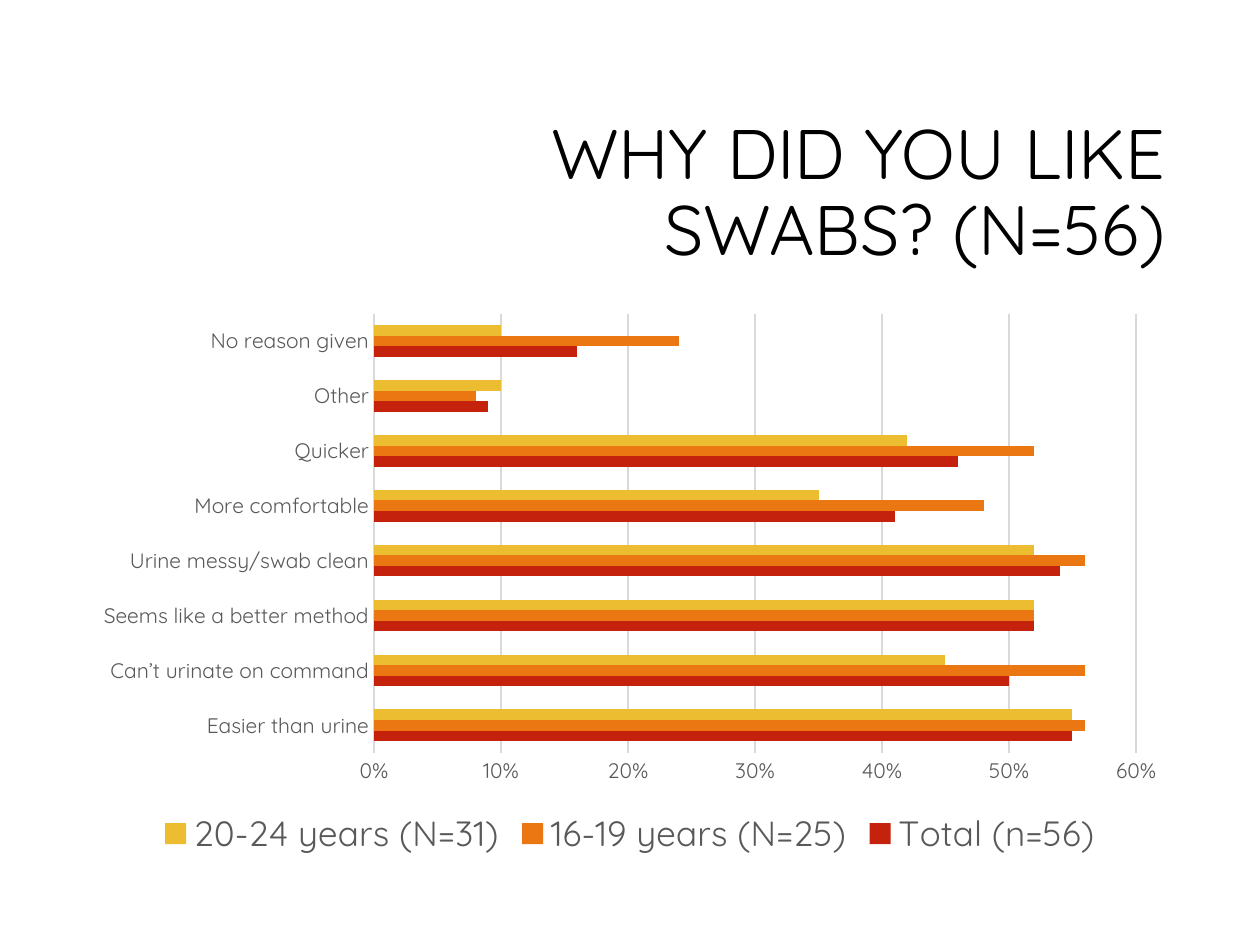
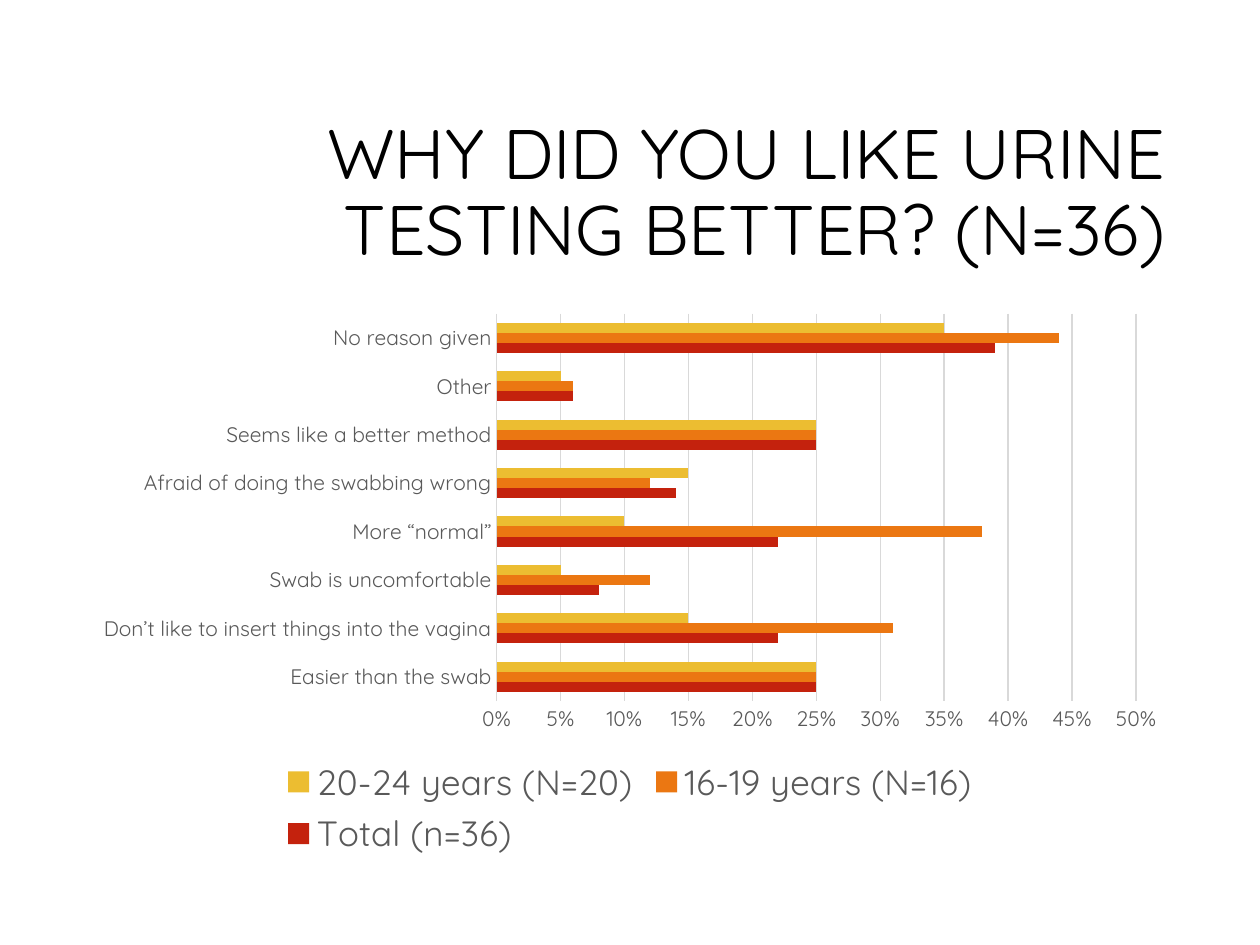
from pptx import Presentation
from pptx.chart.data import CategoryChartData
from pptx.dml.color import RGBColor
from pptx.enum import chart as ch, text as tx
from pptx.util import Inches, Pt

FONT = "Quicksand"
BLACK = RGBColor(0x00, 0x00, 0x00)
GREY = RGBColor(0x59, 0x59, 0x59)
GRID = RGBColor(0xD9, 0xD9, 0xD9)
RED = RGBColor(0xC4, 0x22, 0x0D)
ORANGE = RGBColor(0xEB, 0x77, 0x12)
YELLOW = RGBColor(0xEC, 0xBD, 0x31)
AGE_COLOURS = [RED, ORANGE, YELLOW]

SWAB_REASONS = [
    "Easier than urine", "Can’t urinate on command",
    "Seems like a better method", "Urine messy/swab clean",
    "More comfortable", "Quicker", "Other", "No reason given",
]
SWAB_SHARES = {
    "Total (n=56)": [0.55, 0.5, 0.52, 0.54, 0.41, 0.46, 0.09, 0.16],
    "16-19 years (N=25)": [0.56, 0.56, 0.52, 0.56, 0.48, 0.52, 0.08, 0.24],
    "20-24 years (N=31)": [0.55, 0.45, 0.52, 0.52, 0.35, 0.42, 0.1, 0.1],
}
URINE_REASONS = [
    "Easier than the swab", "Don’t like to insert things into the vagina",
    "Swab is uncomfortable", "More “normal”",
    "Afraid of doing the swabbing wrong", "Seems like a better method",
    "Other", "No reason given",
]
URINE_SHARES = {
    "Total (n=36)": [0.25, 0.22, 0.08, 0.22, 0.14, 0.25, 0.06, 0.39],
    "16-19 years (N=16)": [0.25, 0.31, 0.12, 0.38, 0.12, 0.25, 0.06, 0.44],
    "20-24 years (N=20)": [0.25, 0.15, 0.05, 0.1, 0.15, 0.25, 0.05, 0.35],
}


def style_font(font, size, colour):
    font.name = FONT
    font.size = Pt(size)
    font.color.rgb = colour


def add_text(slide, words, left, top, width, height, *, size, colour=BLACK,
             align=tx.PP_ALIGN.LEFT, anchor=tx.MSO_ANCHOR.TOP, spacing=1.0):
    box = slide.shapes.add_textbox(
        Inches(left), Inches(top), Inches(width), Inches(height))
    frame = box.text_frame
    frame.word_wrap = True
    frame.vertical_anchor = anchor
    paragraph = frame.paragraphs[0]
    paragraph.alignment = align
    paragraph.line_spacing = spacing
    run = paragraph.add_run()
    run.text = words
    style_font(run.font, size, colour)


def add_title(slide, words):
    add_text(slide, words, 2.38, 0.84, 6.97, 1.41, size=40, spacing=0.9,
             align=tx.PP_ALIGN.RIGHT, anchor=tx.MSO_ANCHOR.MIDDLE)


def style_axes(chart, top_share, step):
    reasons, shares = chart.category_axis, chart.value_axis
    for axis in (reasons, shares):
        axis.major_tick_mark = axis.minor_tick_mark = ch.XL_TICK_MARK.NONE
        style_font(axis.tick_labels.font, 12, GREY)
    reasons.has_major_gridlines = False
    shares.has_major_gridlines = True
    for line in (reasons.format.line, shares.major_gridlines.format.line):
        line.color.rgb = GRID
        line.width = Pt(0.75)
    shares.format.line.fill.background()
    shares.minimum_scale = 0
    shares.maximum_scale = top_share
    shares.major_unit = step
    shares.tick_labels.number_format = "0%"
    shares.tick_labels.number_format_is_linked = False


def add_reason_chart(slide, reasons, shares, gap, top_share, step):
    """Bars of the share giving each reason, one series per age group."""
    data = CategoryChartData(number_format="0%")
    data.categories = reasons
    for group, values in shares.items():
        data.add_series(group, values)
    chart = slide.shapes.add_chart(
        ch.XL_CHART_TYPE.BAR_CLUSTERED, Inches(0.65), Inches(2.4),
        Inches(8.7), Inches(4.45), data).chart
    style_font(chart.font, 10, BLACK)
    chart.has_title = False
    style_axes(chart, top_share, step)

    plot = chart.plots[0]
    plot.vary_by_categories = False
    plot.gap_width = gap
    for series, colour in zip(plot.series, AGE_COLOURS):
        series.format.fill.solid()
        series.format.fill.fore_color.rgb = colour

    chart.has_legend = True
    chart.legend.position = ch.XL_LEGEND_POSITION.BOTTOM
    chart.legend.include_in_layout = False
    style_font(chart.legend.font, 20, GREY)


def add_question_slide(deck, question, *chart_details):
    slide = deck.slides.add_slide(deck.slide_layouts[6])
    add_title(slide, question)
    add_reason_chart(slide, *chart_details)


def main():
    deck = Presentation()
    deck.slide_width = Inches(10)
    deck.slide_height = Inches(7.5)
    add_question_slide(deck, "WHY DID YOU LIKE SWABS? (N=56)",
                       SWAB_REASONS, SWAB_SHARES, 219, 0.6, 0.1)
    add_question_slide(deck, "WHY DID YOU LIKE URINE TESTING BETTER? (N=36)",
                       URINE_REASONS, URINE_SHARES, 182, 0.5, 0.05)
    deck.save("out.pptx")


if __name__ == "__main__":
    main()
